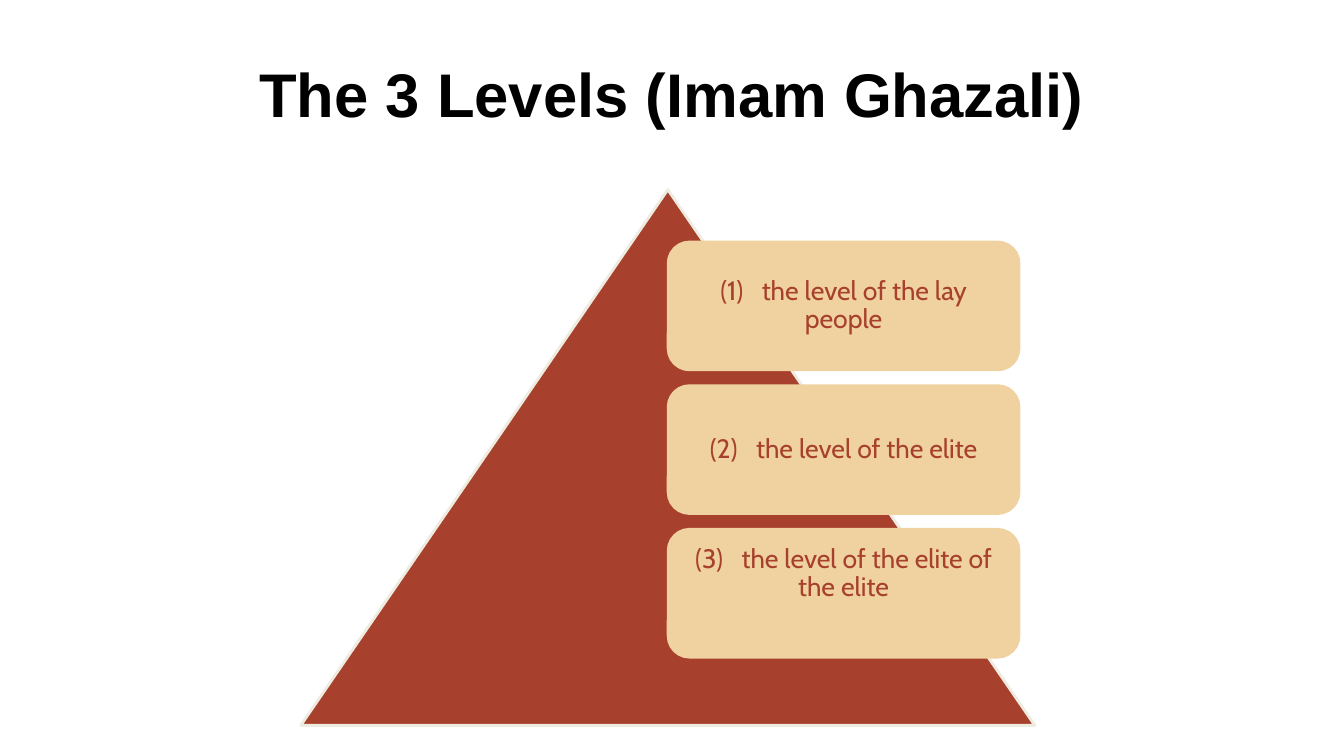
"""Build a slide showing the three levels as cards over a triangle."""
from typing import NamedTuple

from pptx import Presentation
from pptx.dml.color import RGBColor
from pptx.enum import shapes, text
from pptx.util import Cm, Pt

RED = "A7402C"
SAND = "F0D2A1"
IVORY = "EEECE1"
BLACK = "000000"

CARD_LEFT, CARD_TOP = 16.84, 6.1
CARD_WIDTH, CARD_HEIGHT = 8.84, 3.22
CARD_PITCH = 3.62
CARD_INSET = 0.2


class Level(NamedTuple):
    """A numbered level and the extra space kept below its text in cm."""
    label: str
    space_below: float = 0


LEVELS = [
    Level("the level of the lay people"),
    Level("the level of the elite"),
    Level("the level of the elite of the elite", 0.97),
]


def color(value: str) -> RGBColor:
    """Turn a hex string into a colour."""
    return RGBColor.from_string(value)


def add_run(paragraph, words: str, font: str, size: float, tint: str, bold: bool = False):
    """Add one formatted run to a paragraph."""
    run = paragraph.add_run()
    run.text = words
    run.font.name = font
    run.font.size = Pt(size)
    run.font.bold = bold
    run.font.color.rgb = color(tint)
    return run


def add_filled_shape(slide, kind, left: float, top: float, width: float,
                     height: float, fill: str, line: str):
    """Add a flat preset shape with a two-point outline."""
    shape = slide.shapes.add_shape(kind, Cm(left), Cm(top), Cm(width), Cm(height))
    shape.shadow.inherit = False
    shape.fill.solid()
    shape.fill.fore_color.rgb = color(fill)
    shape.line.color.rgb = color(line)
    shape.line.width = Pt(2)
    return shape


def add_title(slide, words: str) -> None:
    """Add the centred slide title."""
    box = slide.shapes.add_textbox(Cm(1.7), Cm(0.76), Cm(30.48), Cm(3.18))
    frame = box.text_frame
    frame.word_wrap = True
    frame.vertical_anchor = text.MSO_ANCHOR.MIDDLE
    paragraph = frame.paragraphs[0]
    paragraph.alignment = text.PP_ALIGN.CENTER
    add_run(paragraph, words, "Arial", 44, BLACK, bold=True)


def add_card(slide, index: int, level: Level) -> None:
    """Add the rounded card of one level."""
    card = add_filled_shape(slide, shapes.MSO_SHAPE.ROUNDED_RECTANGLE,
                            CARD_LEFT, CARD_TOP + index * CARD_PITCH,
                            CARD_WIDTH, CARD_HEIGHT, SAND, SAND)
    frame = card.text_frame
    frame.word_wrap = True
    frame.vertical_anchor = text.MSO_ANCHOR.MIDDLE
    frame.margin_left = frame.margin_right = frame.margin_top = Cm(CARD_INSET)
    frame.margin_bottom = Cm(CARD_INSET + level.space_below)
    paragraph = frame.paragraphs[0]
    paragraph.alignment = text.PP_ALIGN.CENTER
    paragraph.line_spacing = 0.9
    add_run(paragraph, f"({index + 1})", "Cabin", 19, RED)
    gap = add_run(paragraph, " ", "Cabin", 19, RED)
    gap.font._element.set("spc", "900")
    add_run(paragraph, level.label, "Cabin", 19, RED)


def main() -> None:
    """Create and save the presentation."""
    presentation = Presentation()
    presentation.slide_width, presentation.slide_height = Cm(33.87), Cm(19.05)
    slide = presentation.slides.add_slide(presentation.slide_layouts[6])
    add_title(slide, "The 3 Levels (Imam Ghazali)")
    add_filled_shape(slide, shapes.MSO_SHAPE.ISOSCELES_TRIANGLE,
                     7.58, 4.78, 18.5, 13.5, RED, IVORY)
    for index, level in enumerate(LEVELS):
        add_card(slide, index, level)
    presentation.save("out.pptx")


if __name__ == "__main__":
    main()
